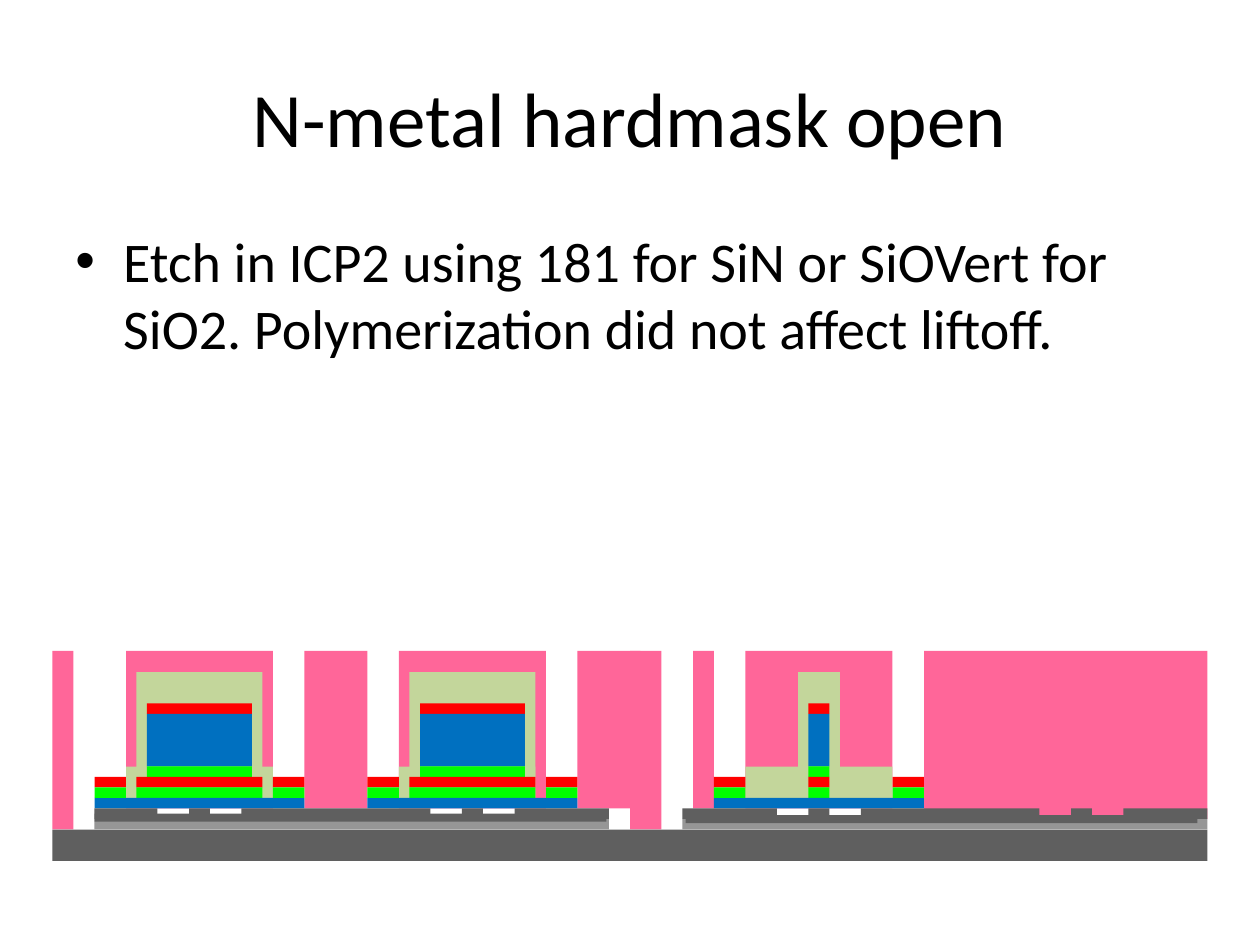
from lxml import etree
from pptx import Presentation
from pptx.dml.color import RGBColor
from pptx.enum.shapes import MSO_SHAPE
from pptx.enum.text import MSO_ANCHOR, PP_ALIGN
from pptx.oxml.ns import qn
from pptx.util import Inches, Pt

RECT = MSO_SHAPE.RECTANGLE
MIDDLE, TOP = MSO_ANCHOR.MIDDLE, MSO_ANCHOR.TOP
CENTER, LEFT = PP_ALIGN.CENTER, PP_ALIGN.LEFT
FONT = "Calibri"
UNIT = 1 / 12
COLORS = {
    "text": "000000",
    "resist": "FF6699",
    "oxide": "C3D69B",
    "red": "FF0000",
    "green": "00FF00",
    "blue": "0070C0",
    "dark": "5F5F5F",
    "light": "969696",
}


def add_text(slide, box, text, size, align, anchor):
    """Place one paragraph in a box and return the paragraph."""
    frame = slide.shapes.add_textbox(*map(Inches, box)).text_frame
    frame.word_wrap = True
    frame.vertical_anchor = anchor
    para = frame.paragraphs[0]
    para.alignment = align
    run = para.add_run()
    run.text = text
    run.font.size = Pt(size)
    run.font.name = FONT
    run.font.color.rgb = RGBColor.from_string(COLORS["text"])
    return para


def add_title(slide, box):
    """Place the centred title."""
    add_text(slide, box, "N-metal hardmask open", 44, CENTER, MIDDLE)


def add_body(slide, box):
    """Place the bullet with a hanging indent."""
    text = ("Etch in ICP2 using 181 for SiN or SiOVert for SiO2. "
            "Polymerization did not affect liftoff.")
    para = add_text(slide, box, text, 32, LEFT, TOP)
    props = para._p.get_or_add_pPr()
    props.set("marL", str(Inches(0.38)))
    props.set("indent", str(-Inches(0.38)))
    space = etree.SubElement(props, qn("a:spcBef"))
    etree.SubElement(space, qn("a:spcPct")).set("val", "20000")
    etree.SubElement(props, qn("a:buFont")).set("typeface", "Arial")
    etree.SubElement(props, qn("a:buChar")).set("char", "•")


def add_layer(slide, box, color, x, y, wide, high=1):
    """Draw one film, measured in grid units from the corner of the box."""
    left, top = box
    layer = slide.shapes.add_shape(
        RECT, Inches(left + x * UNIT), Inches(top + y * UNIT),
        Inches(wide * UNIT), Inches(high * UNIT))
    layer.shadow.inherit = False
    layer.fill.solid()
    layer.fill.fore_color.rgb = RGBColor.from_string(COLORS[color])
    layer.line.fill.background()


def add_resist(slide, box):
    """Draw the resist blocks between the mesas."""
    for x, wide, high in [(0, 2, 17), (24, 6, 15), (50, 6, 15),
                          (55, 3, 17), (61, 2, 15), (83, 27, 16)]:
        add_layer(slide, box, "resist", x, 0, wide, high)


def add_mesa(slide, box, core, base, dome, foot):
    """Draw one mesa, its films centred on a span of 20 units."""
    span, side = 20, 3
    add_layer(slide, box, "resist", side, 0, span - 2 * side, 15)
    add_layer(slide, box, "oxide", side, 11, foot, 3)
    for color, wide, y, high in [("oxide", dome, 2, 10), ("red", core, 5, 1),
                                 ("blue", core, 6, 5), ("green", core, 11, 1),
                                 ("red", base, 12, 1), ("green", base, 13, 1),
                                 ("blue", span, 14, 1)]:
        add_layer(slide, box, color, (span - wide) / 2, y, wide, high)
    for x in (0, span - side):
        add_layer(slide, box, "red", x, 12, side)
        add_layer(slide, box, "green", x, 13, side)


def add_wafer(slide, box):
    """Draw the substrate, the buried film and the notched guide."""
    add_layer(slide, box, "dark", 0, 17, 110, 3)
    for x, wide in [(4, 49), (60, 50)]:
        add_layer(slide, box, "light", x, 16, wide)
    for x, wide in [(4, 6), (13, 2), (18, 18), (39, 2), (44, 9),
                    (60, 9), (72, 2), (77, 17), (97, 2), (102, 8)]:
        add_layer(slide, box, "dark", x, 15, wide)
    for x, y in [(4, 15.5), (60.3, 15.64)]:
        add_layer(slide, box, "dark", x, y, 48.75, 0.75)


def add_stack(slide, box):
    """Draw the whole cross-section from the corner of the box."""
    left, top = box
    add_resist(slide, box)
    for x, core, base, dome, foot in [(4, 10, 12, 12, 14),
                                      (30, 10, 12, 12, 13),
                                      (63, 2, 2, 4, 14)]:
        add_mesa(slide, (left + x * UNIT, top), core, base, dome, foot)
    add_wafer(slide, box)


def main():
    """Build the slide and save it."""
    deck = Presentation()
    deck.slide_width, deck.slide_height = Inches(10), Inches(7.5)
    slide = deck.slides.add_slide(deck.slide_layouts[6])
    add_title(slide, (0.5, 0.3, 9, 1.25))
    add_body(slide, (0.5, 1.75, 9, 4.95))
    add_stack(slide, (5 * UNIT, 62 * UNIT))
    deck.save("out.pptx")


if __name__ == "__main__":
    main()
